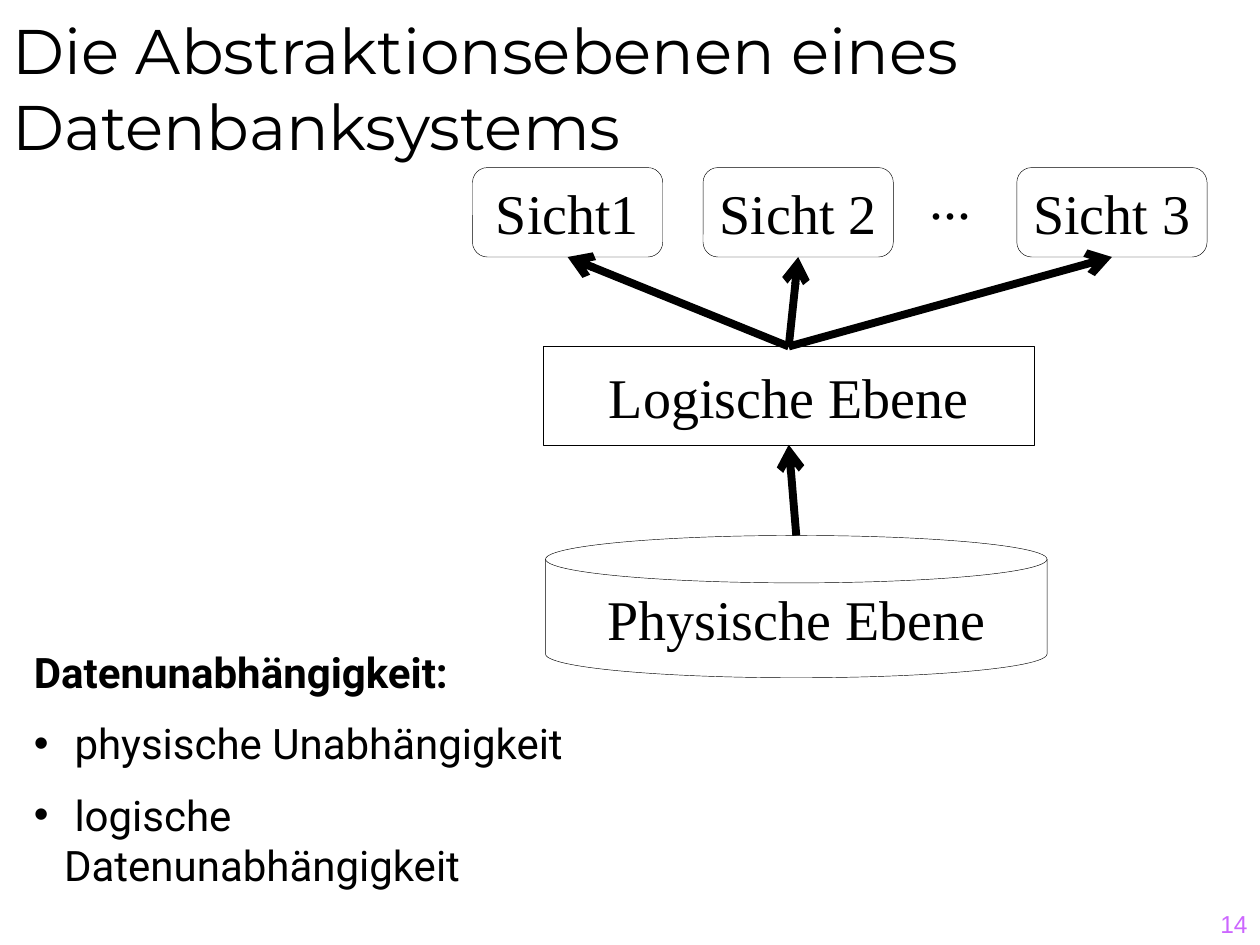
from dataclasses import dataclass
from typing import Optional

from lxml.etree import SubElement
from pptx import Presentation
from pptx.dml.color import RGBColor
from pptx.enum.shapes import MSO_CONNECTOR, MSO_SHAPE
from pptx.enum.text import MSO_ANCHOR, PP_ALIGN
from pptx.oxml.ns import qn
from pptx.util import Inches, Pt


@dataclass(frozen=True)
class Theme:
    ink: RGBColor = RGBColor(0, 0, 0)
    accent: RGBColor = RGBColor(0xCC, 0x66, 0xFF)
    head: str = "Montserrat"
    body: str = "Roboto"
    label: str = "Times New Roman"
    foot: str = "Arial"
    title: int = 36
    node: int = 32
    text: int = 24
    page: int = 14
    hair: float = 0.25
    arrow: float = 4.5
    gap: int = 12
    hang: float = 0.24


@dataclass(frozen=True)
class Box:
    x: float
    y: float
    w: float
    h: float


@dataclass(frozen=True)
class Node:
    text: str
    kind: MSO_SHAPE
    box: Box


@dataclass(frozen=True)
class Note:
    lines: tuple
    box: Box
    font: str
    size: int
    color: RGBColor = Theme.ink
    align: PP_ALIGN = PP_ALIGN.LEFT
    anchor: MSO_ANCHOR = MSO_ANCHOR.TOP


THEME = Theme()
VIEWS = [
    Node(text, MSO_SHAPE.FLOWCHART_ALTERNATE_PROCESS, Box(x, 1.33, 1.51, 0.71))
    for text, x in (("Sicht1", 3.75), ("Sicht 2", 5.58), ("Sicht 3", 8.07))
]
LOGIC = Node("Logische Ebene", MSO_SHAPE.FLOWCHART_PROCESS, Box(4.31, 2.75, 3.9, 0.78))
DISK = Node("Physische Ebene", MSO_SHAPE.FLOWCHART_MAGNETIC_DISK, Box(4.33, 4.25, 3.98, 1.13))
NOTES = [
    Note(("14",), Box(7.92, 7, 2.08, 0.5), THEME.foot, THEME.page, THEME.accent,
         PP_ALIGN.RIGHT, MSO_ANCHOR.BOTTOM),
    Note(("Die Abstraktionsebenen eines Datenbanksystems",), Box(0, 0.67, 10, 0.67),
         THEME.head, THEME.title, anchor=MSO_ANCHOR.BOTTOM),
    Note(("...",), Box(7.08, 1.25, 0.92, 0.63), THEME.label, THEME.node,
         align=PP_ALIGN.CENTER),
]
LIST = Note(
    ("Datenunabhängigkeit:", " physische Unabhängigkeit", " logische Datenunabhängigkeit"),
    Box(0.17, 5.08, 4.92, 1.7), THEME.body, THEME.text,
)


def place(box: Box) -> tuple:
    return tuple(Inches(v) for v in (box.x, box.y, box.w, box.h))


def style(para, font: str, size: int, color: RGBColor, align: PP_ALIGN) -> None:
    para.alignment = align
    para.font.name = font
    para.font.size = Pt(size)
    para.font.color.rgb = color


def write(slide, note: Note):
    frame = slide.shapes.add_textbox(*place(note.box)).text_frame
    frame.word_wrap = True
    frame.vertical_anchor = note.anchor
    frame.text = "\n".join(note.lines)
    for para in frame.paragraphs:
        style(para, note.font, note.size, note.color, note.align)
    return frame


def dot(para) -> None:
    para.space_before = Pt(THEME.gap)
    props = para._p.get_or_add_pPr()
    props.set("marL", str(Inches(THEME.hang)))
    props.set("indent", str(-Inches(THEME.hang)))
    SubElement(props, qn("a:buFont")).set("typeface", THEME.foot)
    SubElement(props, qn("a:buChar")).set("char", "•")


def draw(slide, node: Node):
    shape = slide.shapes.add_shape(node.kind, *place(node.box))
    shape.shadow.inherit = False
    shape.fill.background()
    shape.line.color.rgb = THEME.ink
    shape.line.width = Pt(THEME.hair)
    frame = shape.text_frame
    frame.word_wrap = False
    frame.vertical_anchor = MSO_ANCHOR.MIDDLE
    frame.text = node.text
    style(frame.paragraphs[0], THEME.label, THEME.node, THEME.ink, PP_ALIGN.CENTER)
    return shape


def link(slide, low, high, glue: Optional[int] = None) -> None:
    line = slide.shapes.add_connector(
        MSO_CONNECTOR.STRAIGHT,
        low.left + low.width // 2, low.top,
        high.left + high.width // 2, high.top + high.height,
    )
    if glue is not None:
        line.begin_connect(low, glue)
    line.end_connect(high, 2)
    line.line.color.rgb = THEME.ink
    line.line.width = Pt(THEME.arrow)
    SubElement(line.line._get_or_add_ln(), qn("a:tailEnd")).set("type", "arrow")
    SubElement(line._element.spPr, qn("a:effectLst"))


def main() -> None:
    """Build the slide on the abstraction levels of a database system."""
    deck = Presentation()
    deck.slide_width, deck.slide_height = Inches(10), Inches(7.5)
    slide = deck.slides.add_slide(deck.slide_layouts[6])
    for note in NOTES:
        write(slide, note)
    first, *rest = write(slide, LIST).paragraphs
    first.font.bold = True
    for para in rest:
        dot(para)
    disk, logic = draw(slide, DISK), draw(slide, LOGIC)
    views = [draw(slide, view) for view in VIEWS]
    link(slide, disk, logic)
    for view in views:
        link(slide, logic, view, 0)
    deck.save("out.pptx")


if __name__ == "__main__":
    main()
